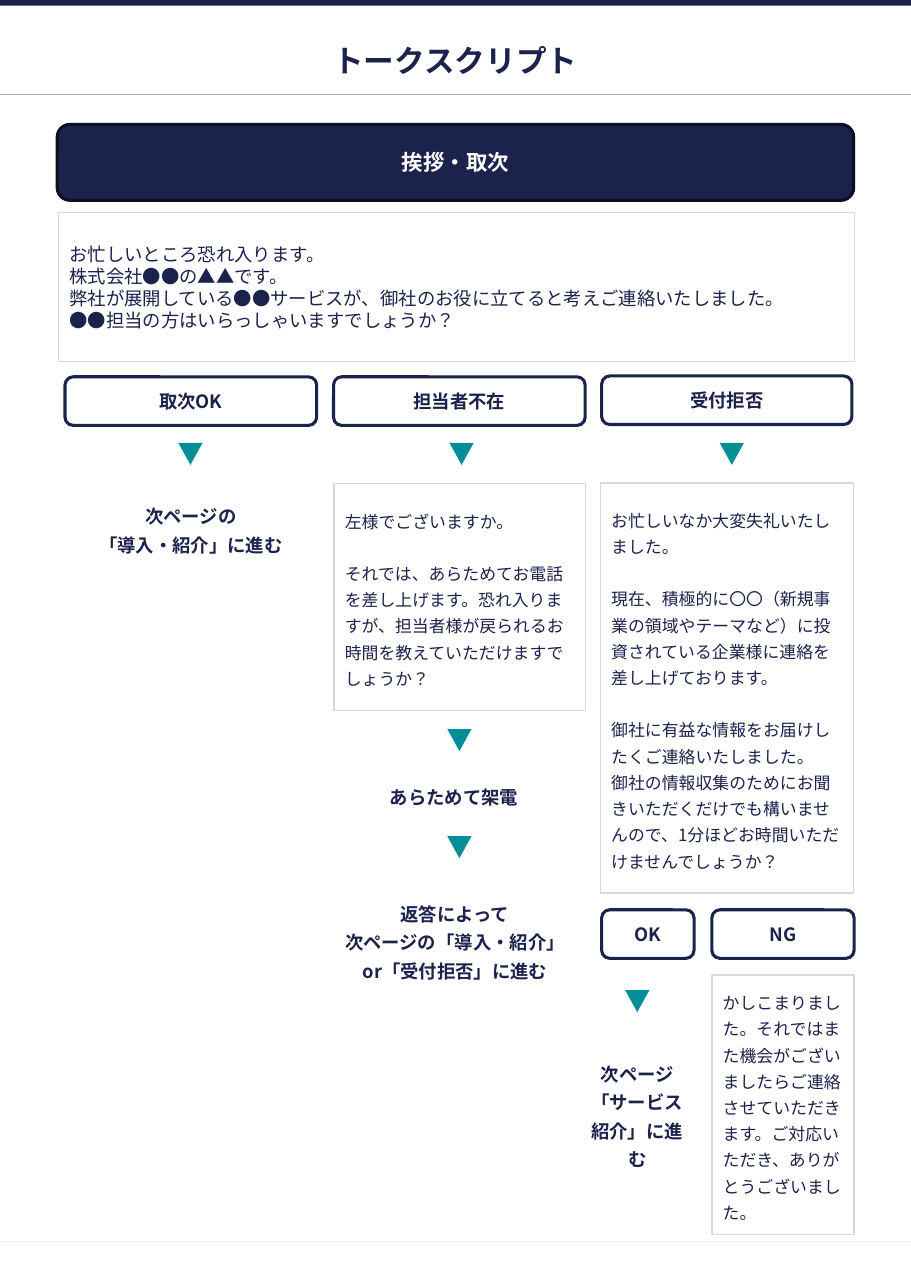
"""Build a one-page call script flow: greeting, three outcomes and their next steps."""
import lxml.etree
import pptx
import pptx.dml.color
import pptx.enum.lang
import pptx.enum.shapes
import pptx.enum.text
import pptx.oxml.ns
import pptx.util

Cm, Pt = pptx.util.Cm, pptx.util.Pt
SHAPE = pptx.enum.shapes.MSO_SHAPE
ALIGN = pptx.enum.text.PP_ALIGN
qn = pptx.oxml.ns.qn
rgb = pptx.dml.color.RGBColor.from_string
FONT = "Noto Sans CJK JP"
NAVY, TEAL, GREY, WHITE = "1B224C", "008F96", "D9D9D9", "FFFFFF"


def write(frame, lines, size, colour=NAVY, bold=False, align=ALIGN.LEFT, spacing=1.0, gaps=()):
    frame.word_wrap = True
    frame.auto_size = pptx.enum.text.MSO_AUTO_SIZE.NONE
    frame.vertical_anchor = pptx.enum.text.MSO_ANCHOR.MIDDLE
    for index, line in enumerate(lines):
        paragraph = frame.paragraphs[0] if index == 0 else frame.add_paragraph()
        paragraph.text = line
        paragraph.alignment = align
        paragraph.line_spacing = spacing
        paragraph.space_before = Pt(17 if index in gaps else 0)
        font = paragraph.font
        font.name, font.size, font.bold = FONT, Pt(size), bold
        font.language_id = pptx.enum.lang.MSO_LANGUAGE_ID.JAPANESE
        font.color.rgb = rgb(colour)
        defaults = paragraph._p.pPr.find(qn("a:defRPr"))
        lxml.etree.SubElement(defaults, qn("a:ea"), typeface=FONT)


def add_box(kind, place, fill=WHITE, outline=None, width=1):
    box = slide.shapes.add_shape(kind, *[Cm(length) for length in place])
    box.shadow.inherit = False
    box.fill.solid()
    box.fill.fore_color.rgb = rgb(fill)
    if outline:
        box.line.color.rgb = rgb(outline)
        box.line.width = Pt(width)
    else:
        box.line.fill.background()
    return box


deck = pptx.Presentation()
deck.slide_width, deck.slide_height = Cm(21), Cm(29.7)
slide = deck.slides.add_slide(deck.slide_layouts[5])

add_box(SHAPE.RECTANGLE, (0, 0, 21, 0.13), NAVY)
for rule_top, rule_colour in [(2.18, "AFAFAF"), (28.63, "F2F2F2")]:
    rule = slide.shapes.add_connector(
        pptx.enum.shapes.MSO_CONNECTOR.STRAIGHT, 0, Cm(rule_top), Cm(21), Cm(rule_top))
    rule.line.color.rgb = rgb(rule_colour)
    rule.line.width = Pt(0.75)
    lxml.etree.SubElement(rule._element.spPr, qn("a:effectLst"))

heading = slide.shapes.title
heading.left, heading.top, heading.width, heading.height = Cm(1.32), Cm(0.86), Cm(18.36), Cm(1.07)
heading_frame = heading.text_frame
heading_frame.margin_left = heading_frame.margin_right = Cm(0.1)
heading_frame.margin_top = heading_frame.margin_bottom = Cm(0.1)
write(heading_frame, ["トークスクリプト"], 20, bold=True, align=ALIGN.CENTER)

stage = add_box(SHAPE.ROUNDED_RECTANGLE, (1.32, 2.87, 18.36, 1.75), NAVY, "0C0F21", 2)
write(stage.text_frame, ["挨拶・取次"], 14, WHITE, True, ALIGN.CENTER)

greeting = add_box(SHAPE.RECTANGLE, (1.35, 4.9, 18.34, 3.43), WHITE, GREY, 0.75)
write(greeting.text_frame, [
    "お忙しいところ恐れ入ります。",
    "株式会社●●の▲▲です。",
    "弊社が展開している●●サービスが、御社のお役に立てると考えご連絡いたしました。",
    "●●担当の方はいらっしゃいますでしょうか？",
], 12)

speeches = [
    ((7.7, 11.15, 5.8, 5.23), (1,), [
        "左様でございますか。",
        "それでは、あらためてお電話を差し上げます。恐れ入りますが、担当者様が戻られるお時間を教えていただけますでしょうか？",
    ]),
    ((13.84, 11.14, 5.84, 9.45), (1, 2), [
        "お忙しいなか大変失礼いたしました。",
        "現在、積極的に〇〇（新規事業の領域やテーマなど）に投資されている企業様に連絡を差し上げております。",
        "御社に有益な情報をお届けしたくご連絡いたしました。",
        "御社の情報収集のためにお聞きいただくだけでも構いませんので、1分ほどお時間いただけませんでしょうか？",
    ]),
    ((16.41, 22.48, 3.28, 5.99), (), [
        "かしこまりました。それではまた機会がございましたらご連絡させていただきます。ご対応いただき、ありがとうございました。",
    ]),
]
for place, gaps, lines in speeches:
    speech = add_box(SHAPE.RECTANGLE, place, WHITE, GREY)
    write(speech.text_frame, lines, 11, spacing=1.3, gaps=gaps)

outcomes = [
    ("取次OK", 1.5, 8.69, 5.8),
    ("担当者不在", 7.69, 8.69, 5.8),
    ("受付拒否", 13.87, 8.67, 5.77),
    ("OK", 13.87, 20.98, 2.13),
    ("NG", 16.41, 20.98, 3.28),
]
for label, left, top, width in outcomes:
    outcome = add_box(SHAPE.ROUNDED_RECTANGLE, (left, top, width, 1.12), WHITE, NAVY, 2)
    write(outcome.text_frame, [label], 12, bold=True, align=ALIGN.CENTER)

next_steps = [
    ((1.5, 11.25, 5.8, 1.83), ["次ページの", "「導入・紹介」に進む"]),
    ((7.57, 17.75, 5.8, 1.12), ["あらためて架電"]),
    ((7.59, 20.22, 5.8, 2.87), ["返答によって", "次ページの「導入・紹介」or「受付拒否」に進む"]),
    ((13.28, 23.39, 2.82, 4.57), ["次ページ", "「サービス紹介」に進む"]),
]
for place, lines in next_steps:
    next_step = add_box(SHAPE.RECTANGLE, place)
    write(next_step.text_frame, lines, 12, bold=True, align=ALIGN.CENTER, spacing=1.3)

for left, top in [(4.11, 10.21), (10.36, 10.21), (16.59, 10.21),
                  (10.31, 16.81), (10.31, 19.28), (14.41, 22.83)]:
    arrow = add_box(SHAPE.ISOSCELES_TRIANGLE, (left, top, 0.56, 0.51), TEAL)
    arrow.rotation = 180

deck.save("out.pptx")
